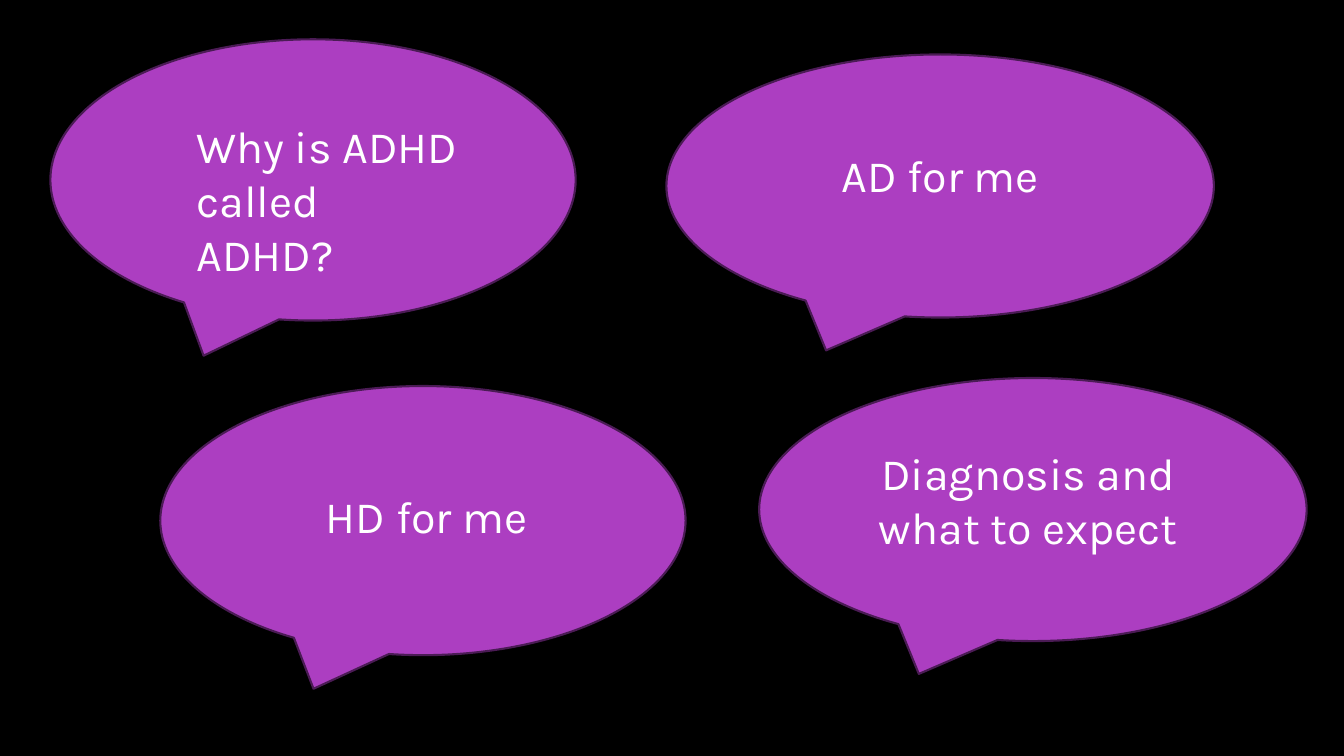
import pptx
import pptx.util
import pptx.dml.color
import pptx.enum.shapes
import pptx.enum.text

Inches = pptx.util.Inches
RGB = pptx.dml.color.RGBColor.from_string
ALIGN = pptx.enum.text.PP_ALIGN

# Content: words, alignment, bubble box, text box (left, top, width, height)
BUBBLES = [
    ("Why is ADHD called ADHD?", ALIGN.LEFT,
     (0.5, 0.39, 5.21, 2.79), (1.85, 1.13, 2.84, 1.18)),
    ("HD for me", ALIGN.CENTER,
     (1.59, 3.83, 5.21, 2.67), (2.82, 4.8, 2.83, 0.64)),
    ("AD for me", ALIGN.CENTER,
     (6.61, 0.54, 5.43, 2.61), (7.84, 1.42, 2.97, 0.64)),
    ("Diagnosis and what to expect", ALIGN.CENTER,
     (7.53, 3.75, 5.43, 2.61), (8.51, 4.37, 3.38, 1.18)),
]

THEME = {
    "background": RGB("000000"),
    "bubble": RGB("AC3EC1"),
    "outline": RGB("4B1B55"),
    "outline_width": pptx.util.Pt(1.5),
    "text": RGB("FFFFFF"),
    "font": {"name": "Karla", "size": pptx.util.Pt(32)},
}


def add_bubble(s, box):
    sp = s.shapes.add_shape(
        pptx.enum.shapes.MSO_SHAPE.OVAL_CALLOUT, *map(Inches, box))
    sp.shadow.inherit = False
    sp.fill.solid()
    sp.fill.fore_color.rgb = THEME["bubble"]
    sp.line.color.rgb = THEME["outline"]
    sp.line.width = THEME["outline_width"]


def add_words(s, words, align, box):
    tf = s.shapes.add_textbox(*map(Inches, box)).text_frame
    tf.word_wrap = True
    tf.auto_size = pptx.enum.text.MSO_AUTO_SIZE.SHAPE_TO_FIT_TEXT
    p = tf.paragraphs[0]
    p.alignment = align
    r = p.add_run()
    r.text = words
    for name, value in THEME["font"].items():
        setattr(r.font, name, value)
    r.font.color.rgb = THEME["text"]


def main():
    prs = pptx.Presentation()
    prs.slide_width, prs.slide_height = Inches(13.33), Inches(7.5)
    s = prs.slides.add_slide(prs.slide_layouts[6])

    # Background
    s.background.fill.solid()
    s.background.fill.fore_color.rgb = THEME["background"]

    # Speech bubbles with their words
    for words, align, bubble_box, text_box in BUBBLES:
        add_bubble(s, bubble_box)
        add_words(s, words, align, text_box)

    prs.save("out.pptx")


if __name__ == "__main__":
    main()
